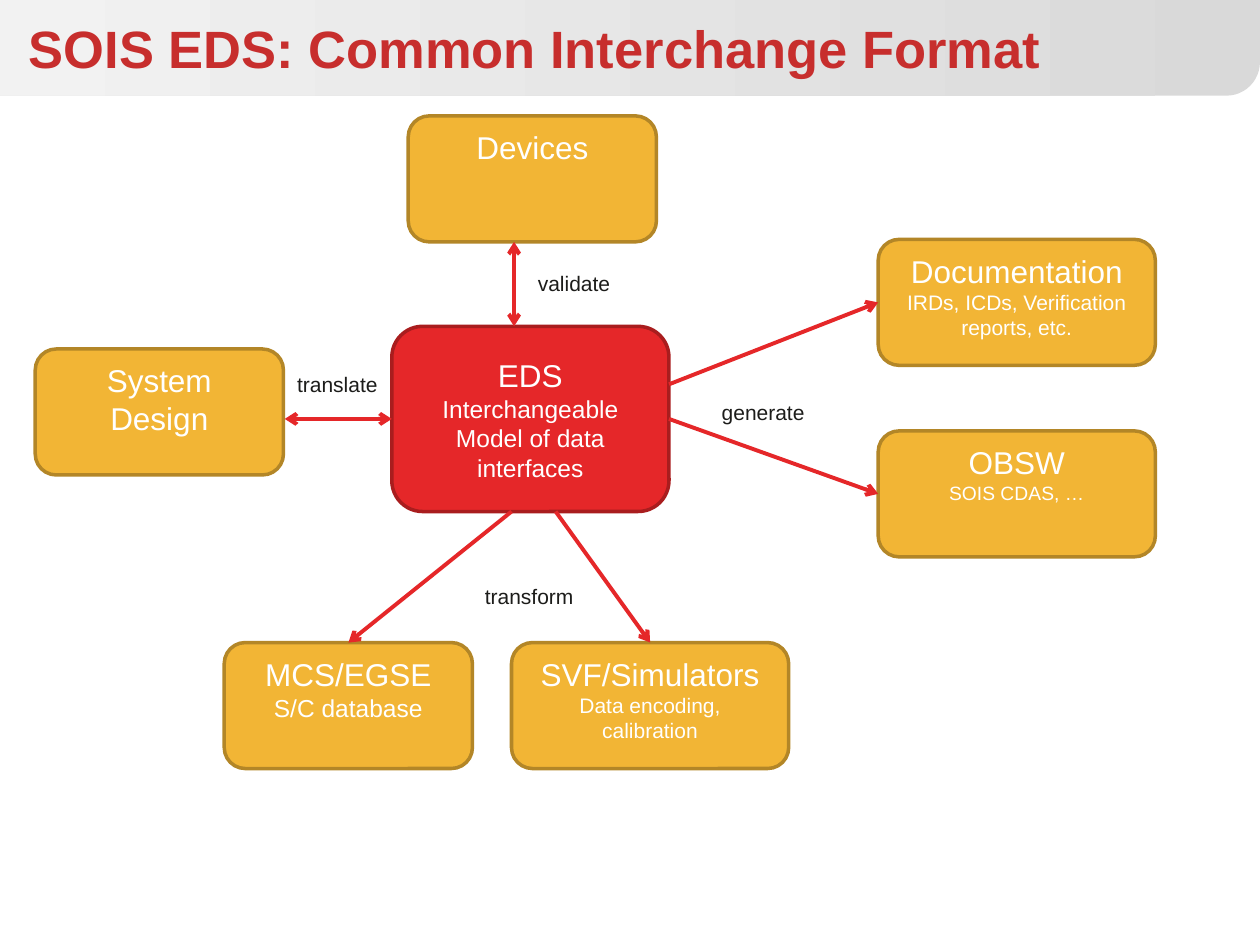
from dataclasses import dataclass

from lxml import etree
from pptx import Presentation
from pptx import util as u
from pptx.dml.color import RGBColor
from pptx.enum import shapes, text
from pptx.oxml.ns import qn

COLUMNS, ROWS = 100, 75
CELL = u.Inches(0.1)
TOP, LEFT, BOTTOM, RIGHT = range(4)


@dataclass(frozen=True)
class Theme:
    font: str = "Arial"
    title: str = "C72E2D"
    tool: str = "F2B535"
    tool_edge: str = "B38627"
    hub: str = "E52729"
    hub_edge: str = "A91D1E"
    on_box: str = "FFFFFF"
    label: str = "1C1C1A"
    band_dark: str = "D9D9D9"
    band_light: str = "F2F2F2"
    title_size: float = 30
    name_size: float = 18
    label_size: float = 12
    edge_width: float = 2
    arrow_width: float = 2.25


THEME = Theme()


def grid(*cells):
    return [u.Emu(round(cell * CELL)) for cell in cells]


def rgb(value):
    return RGBColor.from_string(value)


def add_run(paragraph, words, size, color, bold=False):
    run = paragraph.add_run()
    run.text = words
    run.font.name = THEME.font
    run.font.size = u.Pt(size)
    run.font.bold = bold
    run.font.color.rgb = rgb(color)


def add_header(slide, words):
    """Put the shaded band behind everything and the title on it."""
    band = slide.shapes.add_shape(
        shapes.MSO_SHAPE.ROUND_1_RECTANGLE, *grid(0, 0, COLUMNS, 7.6))
    band.shadow.inherit = False
    band.adjustments[0] = 0.35
    band.line.fill.background()
    band.fill.gradient()
    band.fill.gradient_angle = 180
    for stop, color in zip(band.fill.gradient_stops,
                           (THEME.band_dark, THEME.band_light)):
        stop.color.rgb = rgb(color)
    band._element.spPr.find(qn("a:xfrm")).set("flipV", "1")
    slide.shapes._spTree.insert(2, band._element)

    title = slide.shapes.title
    title.left, title.top, title.width, title.height = grid(1.3, 0.8, 97.3, 6)
    frame = title.text_frame
    frame.vertical_anchor = text.MSO_ANCHOR.MIDDLE
    frame.paragraphs[0].alignment = text.PP_ALIGN.LEFT
    add_run(frame.paragraphs[0], words, THEME.title_size, THEME.title, True)


def add_box(slide, place, name, detail="", detail_size=12, hub=False):
    box = slide.shapes.add_shape(
        shapes.MSO_SHAPE.ROUNDED_RECTANGLE, *grid(*place))
    box.shadow.inherit = False
    box.fill.solid()
    box.fill.fore_color.rgb = rgb(THEME.hub if hub else THEME.tool)
    box.line.color.rgb = rgb(THEME.hub_edge if hub else THEME.tool_edge)
    box.line.width = u.Pt(THEME.edge_width)
    frame = box.text_frame
    frame.word_wrap = True
    frame.vertical_anchor = (
        text.MSO_ANCHOR.MIDDLE if hub else text.MSO_ANCHOR.TOP)
    paragraph = frame.paragraphs[0]
    paragraph.alignment = text.PP_ALIGN.CENTER
    add_run(paragraph, name, THEME.name_size, THEME.on_box)
    if detail:
        paragraph.add_line_break()
        add_run(paragraph, detail, detail_size, THEME.on_box)
    return box


def add_arrow(slide, start, end, source=None, target=None, both_ways=False):
    """Draw an arrow; source and target are (box, side) pairs to join."""
    arrow = slide.shapes.add_connector(
        shapes.MSO_CONNECTOR.STRAIGHT, *grid(*start, *end))
    if source:
        arrow.begin_connect(*source)
    if target:
        arrow.end_connect(*target)
    arrow.line.color.rgb = rgb(THEME.hub)
    arrow.line.width = u.Pt(THEME.arrow_width)
    line = arrow.line._get_or_add_ln()
    for end_tag in ("a:headEnd", "a:tailEnd") if both_ways else ("a:tailEnd",):
        etree.SubElement(line, qn(end_tag), type="arrow")
    etree.SubElement(arrow._element.spPr, qn("a:effectLst"))


def add_label(slide, place, words):
    label = slide.shapes.add_textbox(*grid(*place, 3))
    frame = label.text_frame
    frame.word_wrap = False
    frame.auto_size = text.MSO_AUTO_SIZE.SHAPE_TO_FIT_TEXT
    add_run(frame.paragraphs[0], words, THEME.label_size, THEME.label)


def main():
    deck = Presentation()
    deck.slide_width, deck.slide_height = grid(COLUMNS, ROWS)
    slide = deck.slides.add_slide(deck.slide_layouts.get_by_name("Title Only"))
    add_header(slide, "SOIS EDS: Common Interchange Format")

    narrow, wide, tall = 19.7, 22, 10
    output_left, bottom_row = 69.7, 51
    add_box(slide, (32.4, 9.2, narrow, tall), "Devices")
    documentation = add_box(
        slide, (output_left, 19, wide, tall), "Documentation",
        "IRDs, ICDs, Verification reports, etc.")
    add_box(slide, (2.8, 27.7, narrow, tall), "System Design")
    mcs = add_box(slide, (17.8, bottom_row, narrow, tall), "MCS/EGSE",
                  "S/C database", 14)
    simulators = add_box(slide, (40.6, bottom_row, wide, tall),
                         "SVF/Simulators", "Data encoding, calibration")
    obsw = add_box(slide, (output_left, 34.2, wide, tall), "OBSW",
                   "SOIS CDAS, …", 11)

    eds_left, eds_top, eds_height = 31.1, 25.9, 14.7
    eds_right, eds_bottom = eds_left + wide, eds_top + eds_height
    eds_middle = eds_top + eds_height / 2
    eds = add_box(slide, (eds_left, eds_top, wide, eds_height), "EDS",
                  "Interchangeable Model of data interfaces", 14, hub=True)

    add_arrow(slide, (eds_right, 30.5), (output_left, 24),
              target=(documentation, LEFT))
    add_arrow(slide, (eds_right, eds_middle), (output_left, 39.2),
              source=(eds, RIGHT), target=(obsw, LEFT))
    add_arrow(slide, (44.1, eds_bottom), (51.6, bottom_row),
              target=(simulators, TOP))
    add_arrow(slide, (40.6, eds_bottom), (27.6, bottom_row),
              target=(mcs, TOP))
    add_arrow(slide, (40.8, eds_top), (40.8, 19.2), both_ways=True)
    add_arrow(slide, (eds_left, eds_middle), (22.6, eds_middle),
              source=(eds, LEFT), both_ways=True)

    for words, place in (
        ("generate", (56.3, 31.2, 8.6)),
        ("validate", (41.7, 21, 7.8)),
        ("transform", (37.5, 45.8, 9.1)),
        ("translate", (22.6, 29, 8.5)),
    ):
        add_label(slide, place, words)

    deck.save("out.pptx")


if __name__ == "__main__":
    main()
